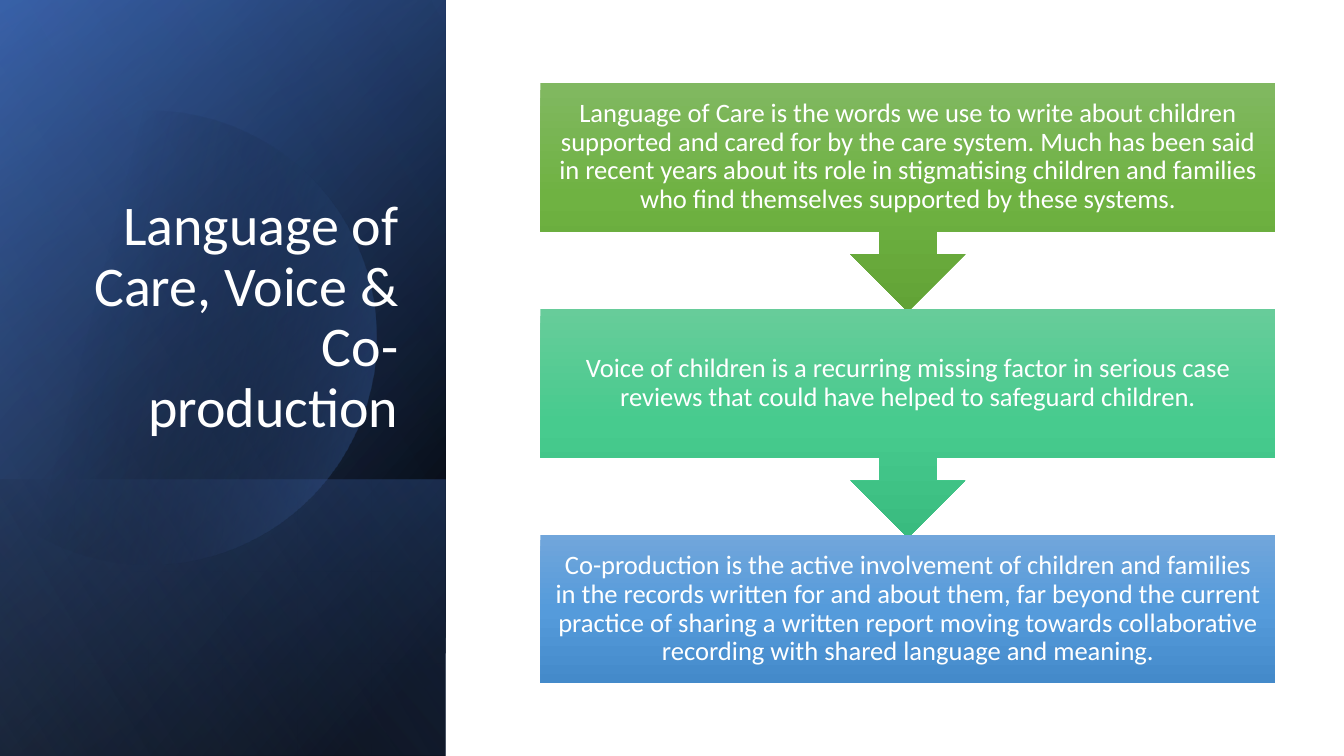
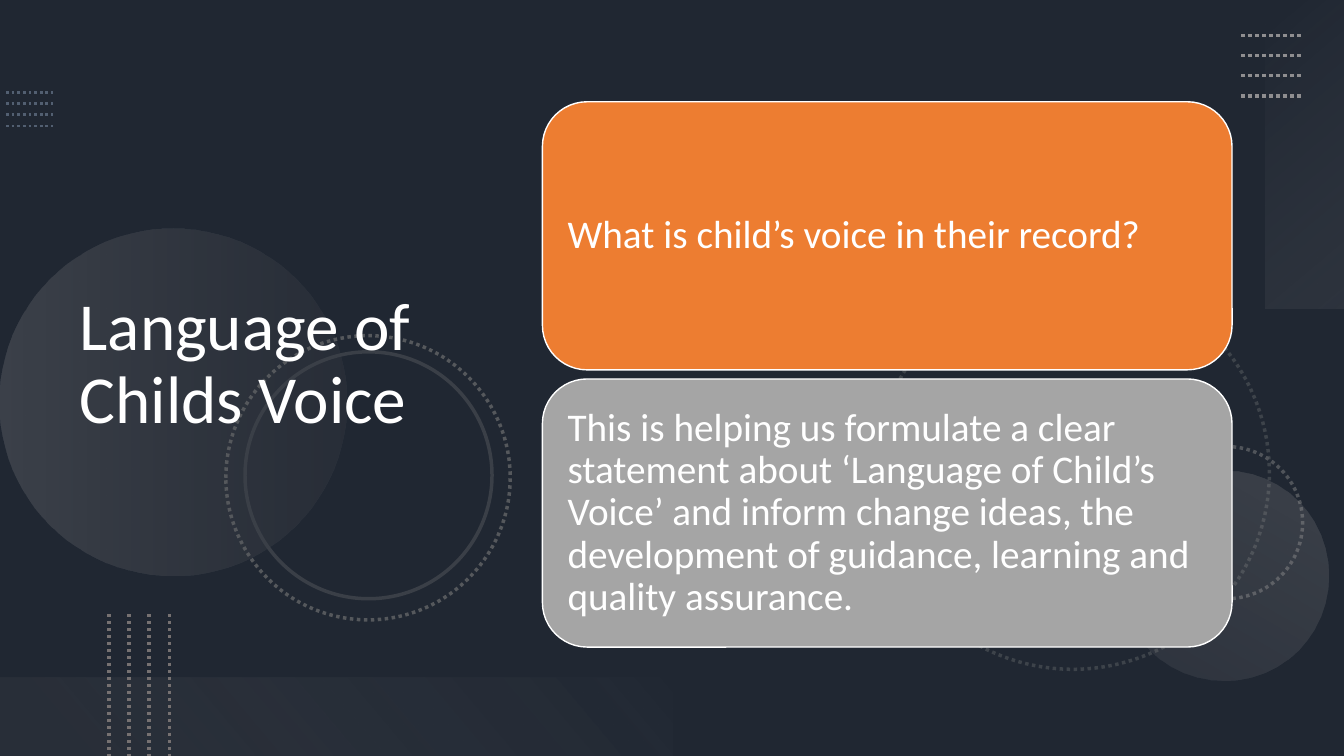
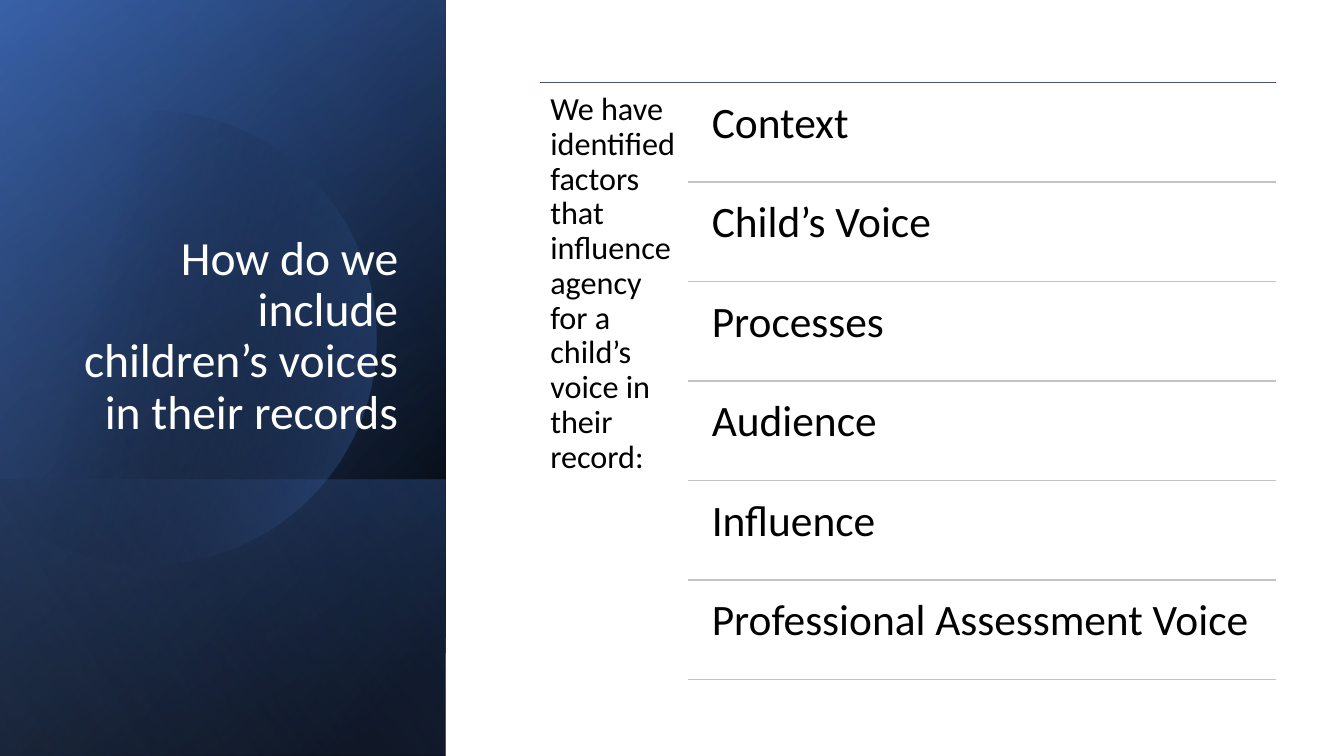
"""Build three slides on the language of care and the voice of the child."""
from math import acos, cos, pi, sin

from pptx import Presentation
from pptx.dml.color import RGBColor
from pptx.enum.dml import MSO_LINE
from pptx.enum.shapes import MSO_CONNECTOR, MSO_SHAPE
from pptx.enum.text import MSO_ANCHOR, MSO_AUTO_SIZE, PP_ALIGN
from pptx.oxml import parse_xml
from pptx.oxml.ns import nsdecls, qn
from pptx.util import Inches, Pt

RECT, ROUND, OVAL = MSO_SHAPE.RECTANGLE, MSO_SHAPE.ROUNDED_RECTANGLE, MSO_SHAPE.OVAL
CALL, DOTS, STRAIGHT = MSO_SHAPE.DOWN_ARROW_CALLOUT, MSO_LINE.ROUND_DOT, MSO_CONNECTOR.STRAIGHT
LEFT, RIGHT, CENTER = PP_ALIGN.LEFT, PP_ALIGN.RIGHT, PP_ALIGN.CENTER
TOP, MIDDLE, BOTTOM = MSO_ANCHOR.TOP, MSO_ANCHOR.MIDDLE, MSO_ANCHOR.BOTTOM
FONT = "Calibri"
HUES = {
    "white": "FFFFFF", "black": "000000", "night": "202732", "navy": "2F5597",
    "blue": "4472C4", "pale": "8FAADC", "orange": "ED7D31", "grey": "A5A5A5",
    "ash": "AFABAB", "stone": "767171", "mist": "F5F5F5", "slate": "44546A",
    "rule": "C1C3C7", "steel": "525F71", "ring": "3A3F47", "halo": "55585C",
    "arc": "3D434A", "loop": "50545A", "dot": "8F8E90",
    "leaf1": "81B861", "leaf2": "6FB242", "leaf3": "62A336",
    "mint1": "67CC9A", "mint2": "47CB8E", "mint3": "39BB7F",
    "sky1": "71A6DB", "sky2": "559BDB", "sky3": "448ACA",
}


def paint(shape, fill=None, angle=0, line=None, width=1, dash=None):
    """Give a shape a plain fill or gradient stops, and an outline."""
    shape.shadow.inherit = False
    shape.fill.background()
    if isinstance(fill, str):
        shape.fill.solid()
        shape.fill.fore_color.rgb = RGBColor.from_string(HUES[fill])
    elif fill:
        stops = "".join(
            f'<a:gs pos="{pos * 1000}"><a:srgbClr val="{HUES[hue]}">'
            f'<a:alpha val="{alpha * 1000}"/></a:srgbClr></a:gs>'
            for pos, hue, alpha in fill)
        grad = parse_xml(
            f'<a:gradFill {nsdecls("a")} rotWithShape="1"><a:gsLst>{stops}</a:gsLst>'
            f'<a:lin ang="{angle * 60000}" scaled="0"/></a:gradFill>')
        props = shape.element.spPr
        props.replace(props.find(qn("a:noFill")), grad)
    if line:
        shape.line.color.rgb = RGBColor.from_string(HUES[line])
        shape.line.width = Pt(width)
        if dash:
            shape.line.dash_style = dash
    else:
        shape.line.fill.background()


def write(shape, text, size, hue="white", align=LEFT, anchor=TOP, inset=0.1):
    """Put one formatted paragraph in a shape."""
    frame = shape.text_frame
    frame.word_wrap = True
    frame.auto_size = MSO_AUTO_SIZE.NONE
    frame.vertical_anchor = anchor
    frame.margin_left = frame.margin_right = Inches(inset)
    frame.margin_top = frame.margin_bottom = Inches(min(inset, 0.15))
    frame.text = text
    para = frame.paragraphs[0]
    para.alignment = align
    para.line_spacing = 0.9
    para.space_before = Pt(0)
    para.font.size = Pt(size)
    para.font.name = FONT
    para.font.color.rgb = RGBColor.from_string(HUES[hue])


deck = Presentation()
deck.slide_width, deck.slide_height = Inches(13.33), Inches(7.5)
care, voice, records = [deck.slides.add_slide(deck.slide_layouts[5]) for _ in range(3)]

panels = [
    (0, 7.5, [(0, "black", 100), (8, "black", 100), (100, "navy", 100)], 220),
    (0, 7.5, [(0, "black", 0), (99, "blue", 46)], 240),
    (4.76, 2.74, [(2, "blue", 29), (100, "black", 30)], 140),
    (0, 7.5, [(0, "black", 0), (99, "pale", 11)], 150),
]
mid_x, mid_y, radius, steps = 1.48, 3.35, 2.25, 90
sweep = pi - acos(mid_x / radius)
turns = [sweep * (2 * i / steps - 1) for i in range(steps + 1)]
curve = [(Inches(mid_x + radius * cos(t)), Inches(mid_y + radius * sin(t))) for t in turns]
for slide in (care, records):
    for i, (y, h, stops, angle) in enumerate(panels):
        if i == 3:
            pen = slide.shapes.build_freeform(*curve[0])
            pen.add_line_segments(curve[1:], close=True)
            paint(pen.convert_to_shape(), [(29, "black", 0), (100, "blue", 43)], 14)
        panel = slide.shapes.add_shape(RECT, 0, Inches(y), Inches(4.42), Inches(h))
        paint(panel, stops, angle)

voice.background.fill.solid()
voice.background.fill.fore_color.rgb = RGBColor.from_string(HUES["night"])
decor = [
    (OVAL, 8.69, 2.74, 3.9, 3.9, None, 0, "arc", DOTS),
    (OVAL, 11.41, 4.43, 1.51, 1.51, None, 0, "loop", DOTS),
    (OVAL, 0, 2.27, 3.44, 3.44, [(0, "ash", 20), (100, "stone", 10)], 0, None, None),
    (OVAL, 11.1, 4.67, 2.08, 2.08, [(0, "ash", 10), (100, "ash", 20)], 300, None, None),
    (OVAL, 2.24, 3.33, 2.82, 2.82, None, 0, "halo", DOTS),
    (OVAL, 2.43, 3.49, 2.45, 2.45, None, 0, "ring", None),
    (RECT, 12.55, 0, 0.78, 3.06, [(0, "mist", 0), (100, "ash", 10)], 50, None, None),
    (RECT, 0, 6.72, 6.67, 0.78, [(10, "stone", 10), (100, "mist", 0)], 320, None, None),
]
for kind, x, y, w, h, fill, angle, line, dash in decor:
    item = voice.shapes.add_shape(kind, Inches(x), Inches(y), Inches(w), Inches(h))
    paint(item, fill, angle, line, 2.5, dash)

titles = [
    (care, "Language of Care, Voice & Co-production", 40, (0.64, 1.84, 3.41, 2.62), RIGHT, BOTTOM),
    (voice, "Language of Childs Voice", 48, (0.69, 0.54, 4.59, 6.17), LEFT, MIDDLE),
    (records, "How do we include children’s voices in their records", 34,
     (0.64, 1.84, 3.41, 2.62), RIGHT, BOTTOM),
]
for slide, text, size, box, align, anchor in titles:
    title = slide.shapes.title
    title.left, title.top, title.width, title.height = [Inches(v) for v in box]
    write(title, text, size, align=align, anchor=anchor)
    title.element.getparent().append(title.element)

flow = [
    ("leaf", CALL, 2.27, "Language of Care is the words we use to write about children supported "
     "and cared for by the care system. Much has been said in recent years about its role in "
     "stigmatising children and families who find themselves supported by these systems."),
    ("mint", CALL, 2.27, "Voice of children is a recurring missing factor in serious case reviews "
     "that could have helped to safeguard children."),
    ("sky", RECT, 1.47, "Co-production is the active involvement of children and families in the "
     "records written for and about them, far beyond the current practice of sharing a written "
     "report moving towards collaborative recording with shared language and meaning."),
]
for i, (hue, kind, h, text) in enumerate(flow):
    step = care.shapes.add_shape(kind, Inches(5.36), Inches(0.82 + i * 2.245), Inches(7.29), Inches(h))
    paint(step, [(0, hue + "1", 100), (50, hue + "2", 100), (100, hue + "3", 100)], 90)
    write(step, text, 19, align=CENTER, anchor=MIDDLE, inset=0.15)

cards = [
    ("orange", "What is child’s voice in their record?"),
    ("grey", "This is helping us formulate a clear statement about ‘Language of Child’s Voice’ "
     "and inform change ideas, the development of guidance, learning and quality assurance."),
]
for i, (hue, text) in enumerate(cards):
    card = voice.shapes.add_shape(ROUND, Inches(5.38), Inches(1.01 + i * 2.75), Inches(6.84), Inches(2.66))
    paint(card, hue, line="white")
    write(card, text, 28, anchor=MIDDLE, inset=0.12)

lead = records.shapes.add_textbox(Inches(5.36), Inches(0.82), Inches(1.46), Inches(5.96))
write(lead, "We have identified factors that influence agency for a child’s voice in their record:",
      23, "black")

lines = [(records, 5.36, 0.82, 12.66, 0.82, "slate", 0.5, None)]
factors = ["Context", "Child’s Voice", "Processes", "Audience", "Influence",
           "Professional Assessment Voice"]
pitch = 5.92 / len(factors)
for i, text in enumerate(factors):
    y = 0.82 + i * pitch
    row = records.shapes.add_textbox(Inches(6.93), Inches(y + 0.05), Inches(5.72), Inches(0.94))
    write(row, text, 31, "black", inset=0.13)
    lines.append((records, 6.82, y + pitch, 12.66, y + pitch, "rule", 1, None))

for i in range(4):
    y1, y2, x = 0.92 + i * 0.11, 0.35 + i * 0.2, 1.08 + i * 0.2
    lines += [
        (voice, 0.06, y1, 0.53, y1, "steel", 2, DOTS),
        (voice, 12.31, y2, 12.91, y2, "dot", 2.5, DOTS),
        (voice, x, 6.09, x, 7.5, "stone", 2.5, DOTS),
    ]
for slide, x1, y1, x2, y2, hue, width, dash in lines:
    rule = slide.shapes.add_connector(STRAIGHT, Inches(x1), Inches(y1), Inches(x2), Inches(y2))
    rule.line.color.rgb = RGBColor.from_string(HUES[hue])
    rule.line.width = Pt(width)
    if dash:
        rule.line.dash_style = dash
    rule.element.spPr.append(parse_xml(f'<a:effectLst {nsdecls("a")}/>'))

deck.save("out.pptx")
